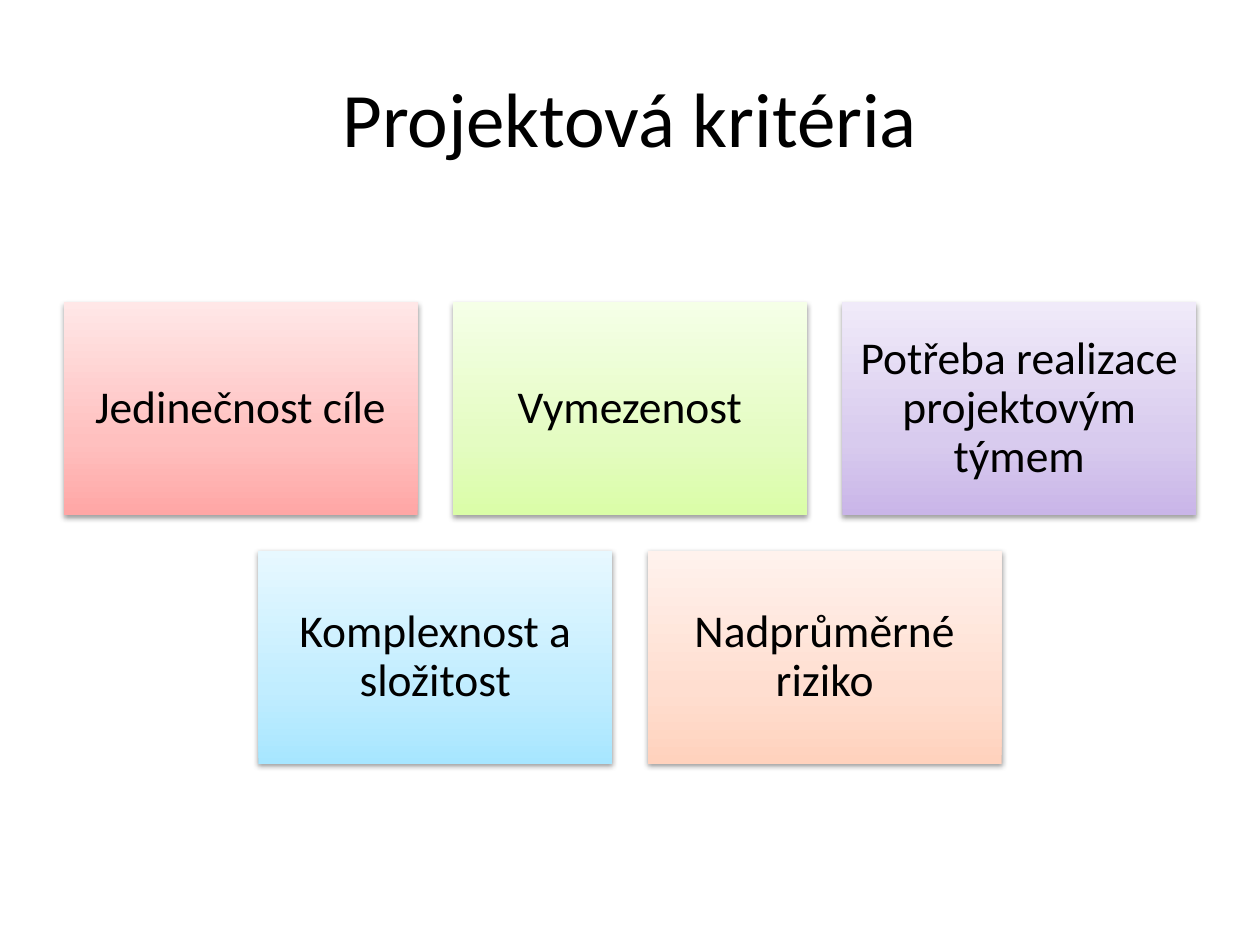
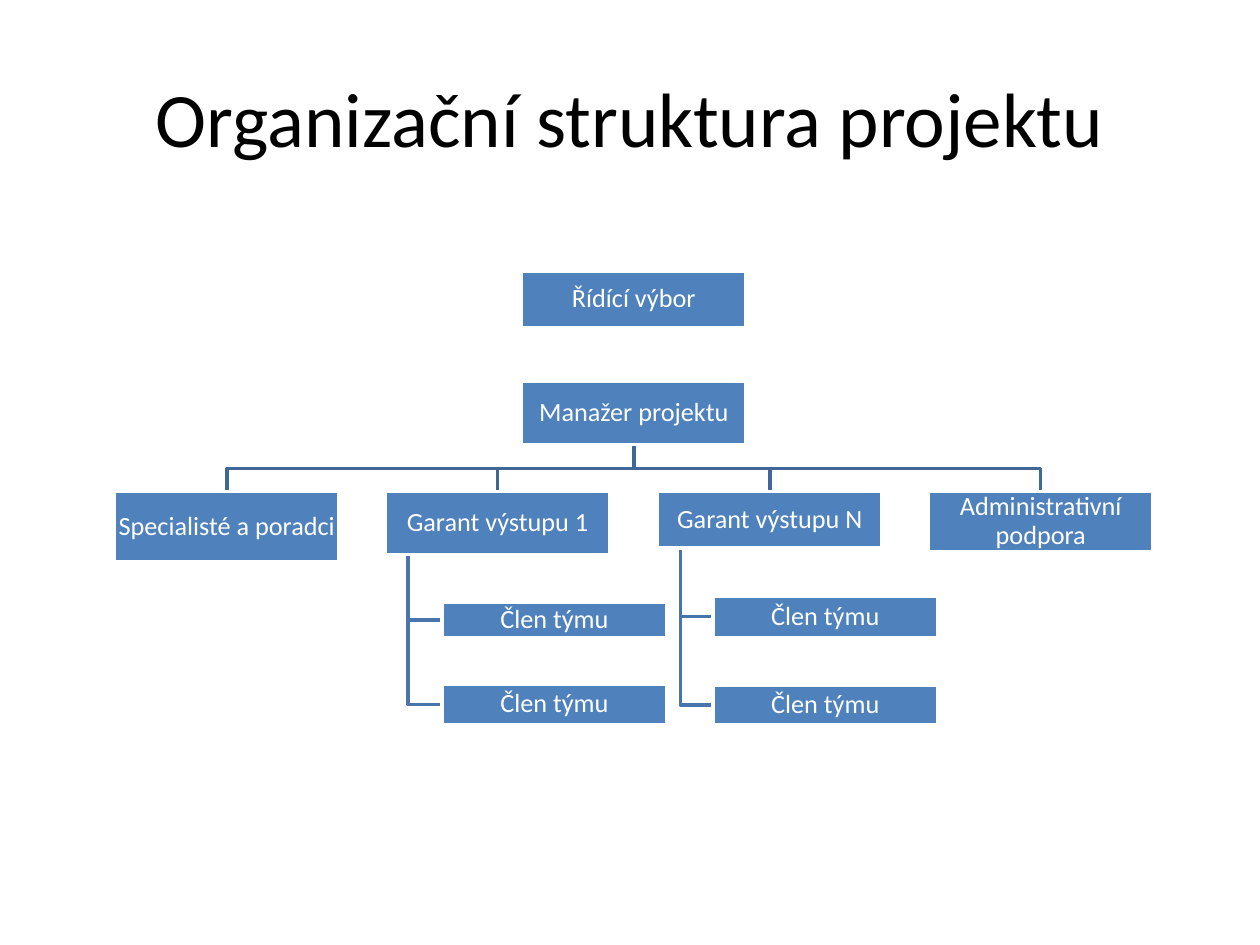
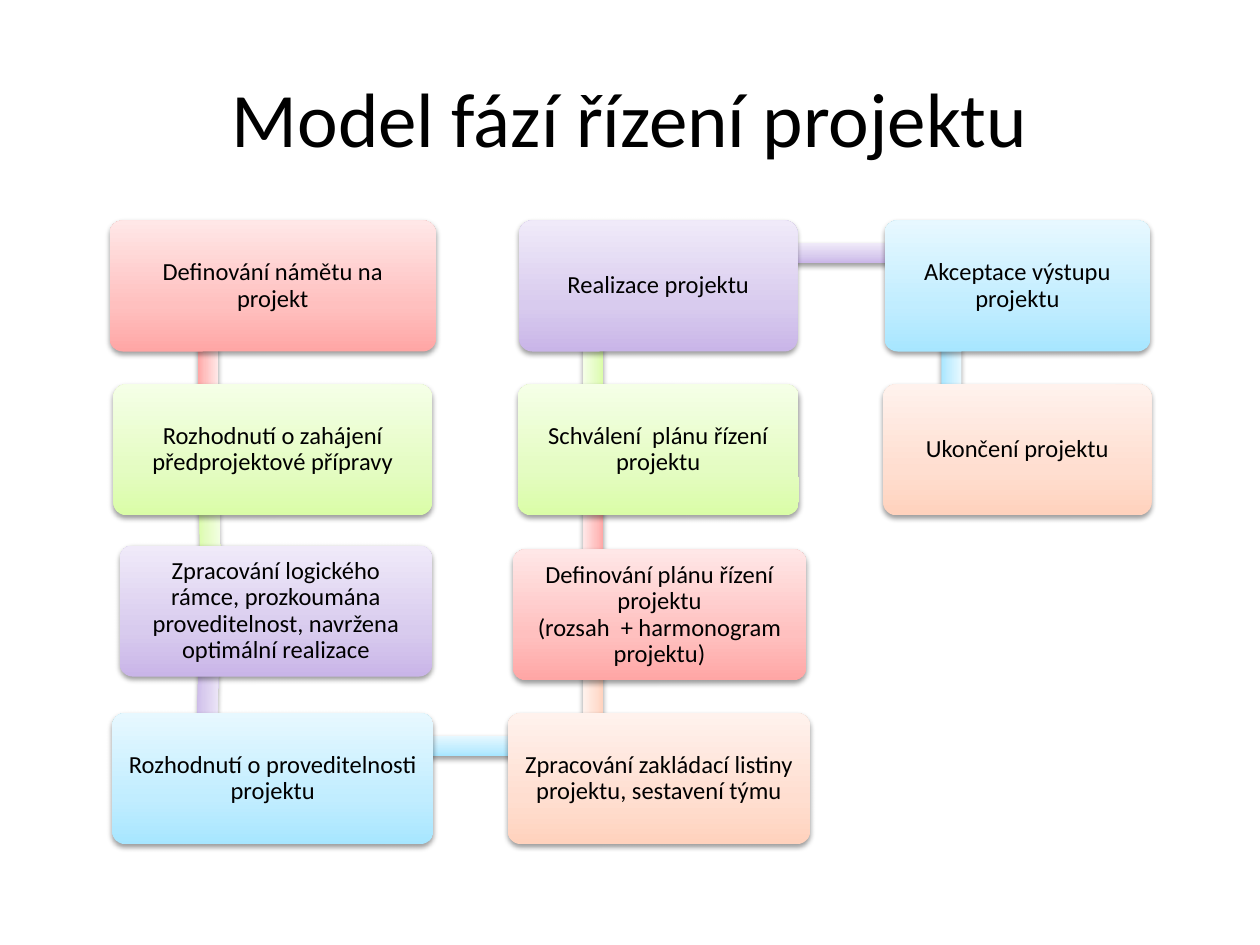
from dataclasses import dataclass
from itertools import cycle
from math import atan2, degrees, hypot

from pptx import Presentation
from pptx.dml.color import RGBColor
from pptx.enum.shapes import MSO_SHAPE
from pptx.enum.text import MSO_ANCHOR, PP_ALIGN
from pptx.oxml import parse_xml
from pptx.oxml.ns import nsdecls, qn
from pptx.util import Inches, Pt

RECT, ROUNDED = MSO_SHAPE.RECTANGLE, MSO_SHAPE.ROUNDED_RECTANGLE
MIDDLE, CENTER = MSO_ANCHOR.MIDDLE, PP_ALIGN.CENTER
MARGINS = ("margin_left", "margin_top", "margin_right", "margin_bottom")


@dataclass(frozen=True)
class Theme:
    width: float = 10
    height: float = 7.5
    font: str = "Calibri"
    black: str = "000000"
    white: str = "FFFFFF"
    box: str = "4F81BD"
    link_top: str = "3F6797"
    link_low: str = "4875AC"
    title_size: int = 44
    card_size: int = 26
    org_size: int = 15
    phase_size: int = 14
    line: int = 2
    # Gradient stops at 0, 35 and 100 %, running from the bottom up
    tints: tuple = (
        ("FFA6A5", "FFC0BF", "FFE7E7"),
        ("DAFDA7", "E4FCC2", "F5FFE7"),
        ("C9B5E8", "D8CBEE", "F0EAF9"),
        ("A7E6FF", "C1EDFF", "E7F8FF"),
        ("FFD2BD", "FFDED0", "FFF2ED"),
    )


THEME = Theme()

# Slide 1: rows of cards
CARD_ROWS = [
    ["Jedinečnost cíle", "Vymezenost", "Potřeba realizace projektovým týmem"],
    ["Komplexnost a složitost", "Nadprůměrné riziko"],
]

# Slide 2: key -> text, left, top, height
BOX_W = 1.78
ORG = {
    "board": ("Řídící výbor", 4.14, 2.15, 0.45),
    "manager": ("Manažer projektu", 4.14, 3.03, 0.5),
    "experts": ("Specialisté a poradci", 0.91, 3.9, 0.56),
    "lead 1": ("Garant výstupu 1", 3.06, 3.9, 0.5),
    "member 1a": ("Člen týmu", 3.51, 4.78, 0.28),
    "member 1b": ("Člen týmu", 3.51, 5.43, 0.32),
    "lead N": ("Garant výstupu N", 5.22, 3.9, 0.45),
    "member Na": ("Člen týmu", 5.66, 4.73, 0.33),
    "member Nb": ("Člen týmu", 5.66, 5.44, 0.31),
    "admin": ("Administrativní podpora", 7.37, 3.9, 0.48),
}
REPORTS = ["experts", "lead 1", "lead N", "admin"]
TEAMS = {"lead 1": ["member 1a", "member 1b"],
         "lead N": ["member Na", "member Nb"]}

# Slide 3: text, left, top, width, x where the link bars meet
PHASE_H = 1.04
PHASES = [
    ("Definování námětu na projekt", 0.87, 1.75, 2.59, 1.65),
    ("Rozhodnutí o zahájení předprojektové přípravy", 0.9, 3.05, 2.53, 1.65),
    ("Zpracování logického rámce, prozkoumána proveditelnost, "
     "navržena optimální realizace", 0.95, 4.33, 2.48, 1.67),
    ("Rozhodnutí o proveditelnosti projektu", 0.89, 5.66, 2.55, 1.64),
    ("Zpracování zakládací listiny projektu, sestavení týmu",
     4.03, 5.66, 2.4, 4.71),
    ("Definování plánu řízení projektu\n(rozsah  + harmonogram projektu)",
     4.07, 4.36, 2.33, 4.71),
    ("Schválení  plánu řízení projektu", 4.11, 3.05, 2.23, 4.71),
    ("Realizace projektu", 4.12, 1.75, 2.21, 4.71),
    ("Akceptace výstupu projektu", 7.02, 1.75, 2.11, 7.55),
    ("Ukončení projektu", 7.01, 3.05, 2.13, 7.55),
]


def write(sp, text, size, color, margin=None, spacing=None):
    """Centred text in a shape or text box."""
    tf = sp.text_frame
    tf.word_wrap = True
    tf.vertical_anchor = MIDDLE
    if margin is not None:
        for side in MARGINS:
            setattr(tf, side, Inches(margin))
    for i, line in enumerate(text.split("\n")):
        p = tf.add_paragraph() if i else tf.paragraphs[0]
        p.alignment = CENTER
        p.line_spacing = spacing
        r = p.add_run()
        r.text = line
        for name, value in {"name": THEME.font, "size": Pt(size)}.items():
            setattr(r.font, name, value)
        r.font.color.rgb = RGBColor.from_string(color)


def add_titled_slide(prs, title):
    s = prs.slides.add_slide(prs.slide_layouts[6])
    sp = s.shapes.add_textbox(*map(Inches, (0.5, 0.3, 9, 1.25)))
    write(sp, title, THEME.title_size, THEME.black)
    return s


def add_box(s, kind, *at):
    sp = s.shapes.add_shape(kind, *map(Inches, at))
    sp.shadow.inherit = False
    return sp


def add_tinted(s, kind, tint, *at):
    """Shape with a vertical gradient and a soft shadow below."""
    sp = add_box(s, kind, *at)
    sp.line.fill.background()
    sp.fill.gradient()
    sp.fill.gradient_angle = 90
    props = sp._element.spPr
    stops = props.find(".//" + qn("a:gsLst"))
    stops.clear()
    for pos, color in zip((0, 35, 100), tint):
        stops.append(parse_xml(
            f'<a:gs {nsdecls("a")} pos="{pos * 1000}">'
            f'<a:srgbClr val="{color}"/></a:gs>'))
    props.find(qn("a:effectLst")).append(parse_xml(
        f'<a:outerShdw {nsdecls("a")} blurRad="{Pt(3.1)}" dist="{Pt(1.6)}" '
        f'dir="5400000" rotWithShape="0"><a:srgbClr val="{THEME.black}">'
        '<a:alpha val="38000"/></a:srgbClr></a:outerShdw>'))
    return sp


def add_elbow(s, color, *points):
    """Open line through the given points."""
    (x, y), *rest = [(Inches(x), Inches(y)) for x, y in points]
    builder = s.shapes.build_freeform(x, y)
    builder.add_line_segments(rest, close=False)
    sp = builder.convert_to_shape()
    sp.shadow.inherit = False
    sp.fill.background()
    sp.line.color.rgb = RGBColor.from_string(color)
    sp.line.width = Pt(THEME.line)


def add_org_box(s, text, x, y, h):
    sp = add_box(s, RECT, x, y, BOX_W, h)
    sp.fill.solid()
    sp.fill.fore_color.rgb = RGBColor.from_string(THEME.box)
    sp.line.color.rgb = RGBColor.from_string(THEME.white)
    sp.line.width = Pt(THEME.line)
    write(sp, text, THEME.org_size, THEME.white, 0.01, 0.9)


def add_bar(s, tint, start, end):
    """Thin bar between two points, turned to their direction."""
    (x1, y1), (x2, y2) = start, end
    length, thick = hypot(x2 - x1, y2 - y1), 0.16
    sp = add_tinted(s, RECT, tint, (x1 + x2 - length) / 2,
                    (y1 + y2 - thick) / 2, length, thick)
    sp.rotation = degrees(atan2(y2 - y1, x2 - x1)) % 360


def build_criteria(prs):
    s = add_titled_slide(prs, "Projektová kritéria")
    w, h, gap, top = 2.81, 1.69, 0.28, 2.4
    tints = cycle(THEME.tints)
    for row, texts in enumerate(CARD_ROWS):
        left = (THEME.width - len(texts) * (w + gap) + gap) / 2
        for col, text in enumerate(texts):
            sp = add_tinted(s, RECT, next(tints), left + col * (w + gap),
                            top + row * (h + gap), w, h)
            write(sp, text, THEME.card_size, THEME.black, 0.11, 0.9)


def build_organisation(prs):
    s = add_titled_slide(prs, "Organizační struktura projektu")
    # Manager to direct reports
    _, x, y, h = ORG["manager"]
    start_x, bottom, bend = x + BOX_W / 2, y + h, 3.72
    for key in REPORTS:
        _, x, y, _ = ORG[key]
        mid = x + BOX_W / 2
        add_elbow(s, THEME.link_top, (start_x, bottom), (start_x, bend),
                  (mid, bend), (mid, y))
    # Leads to team members
    for lead, members in TEAMS.items():
        _, x, y, h = ORG[lead]
        drop, bottom = x + 0.18, y + h
        for key in members:
            _, x, y, h = ORG[key]
            mid = y + h / 2
            add_elbow(s, THEME.link_low, (drop, bottom), (drop, mid), (x, mid))
    for box in ORG.values():
        add_org_box(s, *box)


def build_phases(prs):
    s = add_titled_slide(prs, "Model fází řízení projektu")
    joints = [(joint_x, y + 0.26) for _, _, y, _, joint_x in PHASES]
    for i, (phase, tint) in enumerate(zip(PHASES, cycle(THEME.tints))):
        text, x, y, w, _ = phase
        if i + 1 < len(joints):
            add_bar(s, tint, joints[i], joints[i + 1])
        sp = add_tinted(s, ROUNDED, tint, x, y, w, PHASE_H)
        sp.adjustments[0] = 0.1
        write(sp, text, THEME.phase_size, THEME.black, 0.09, 0.9)


def main():
    prs = Presentation()
    prs.slide_width = Inches(THEME.width)
    prs.slide_height = Inches(THEME.height)
    build_criteria(prs)
    build_organisation(prs)
    build_phases(prs)
    prs.save("out.pptx")


if __name__ == "__main__":
    main()
